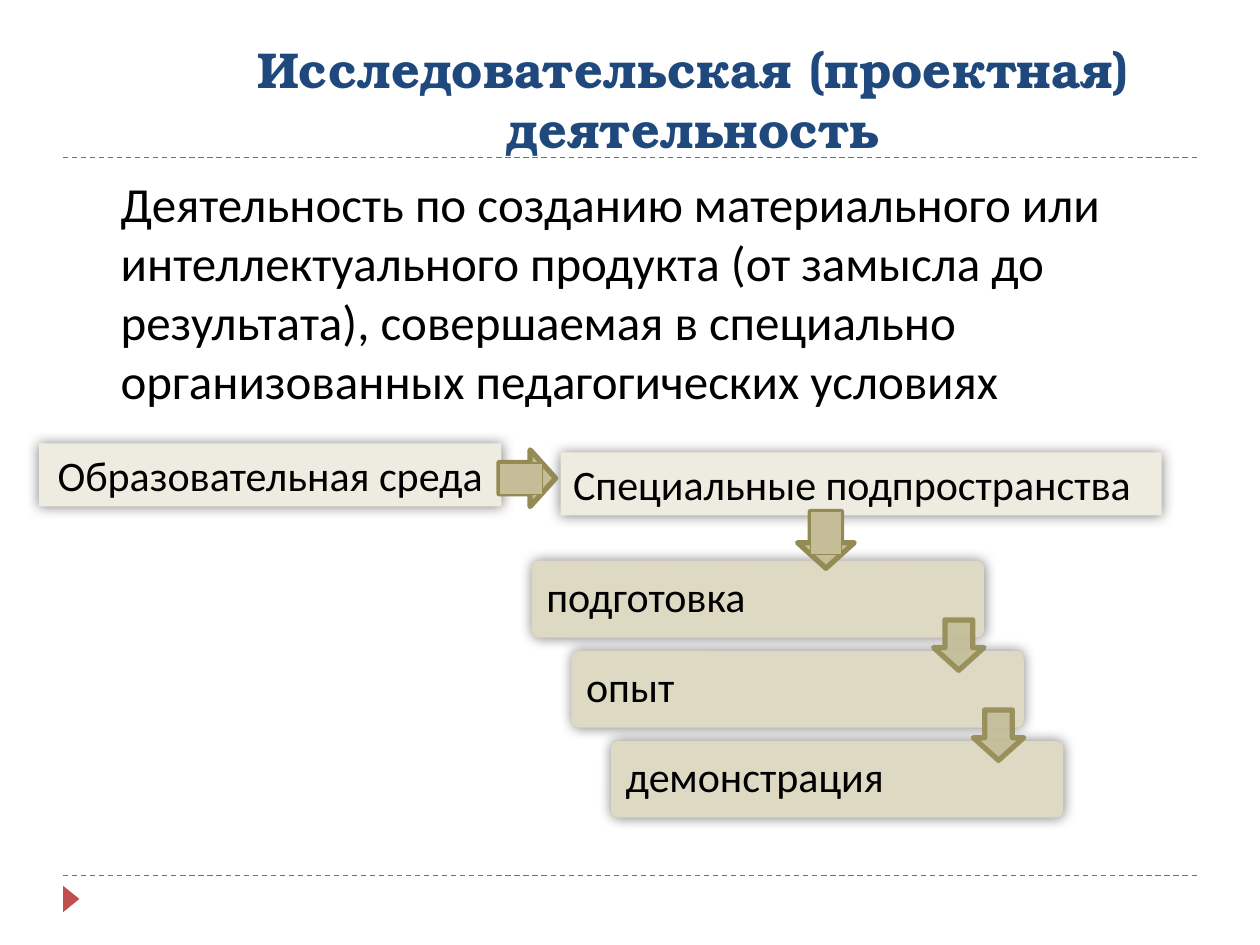
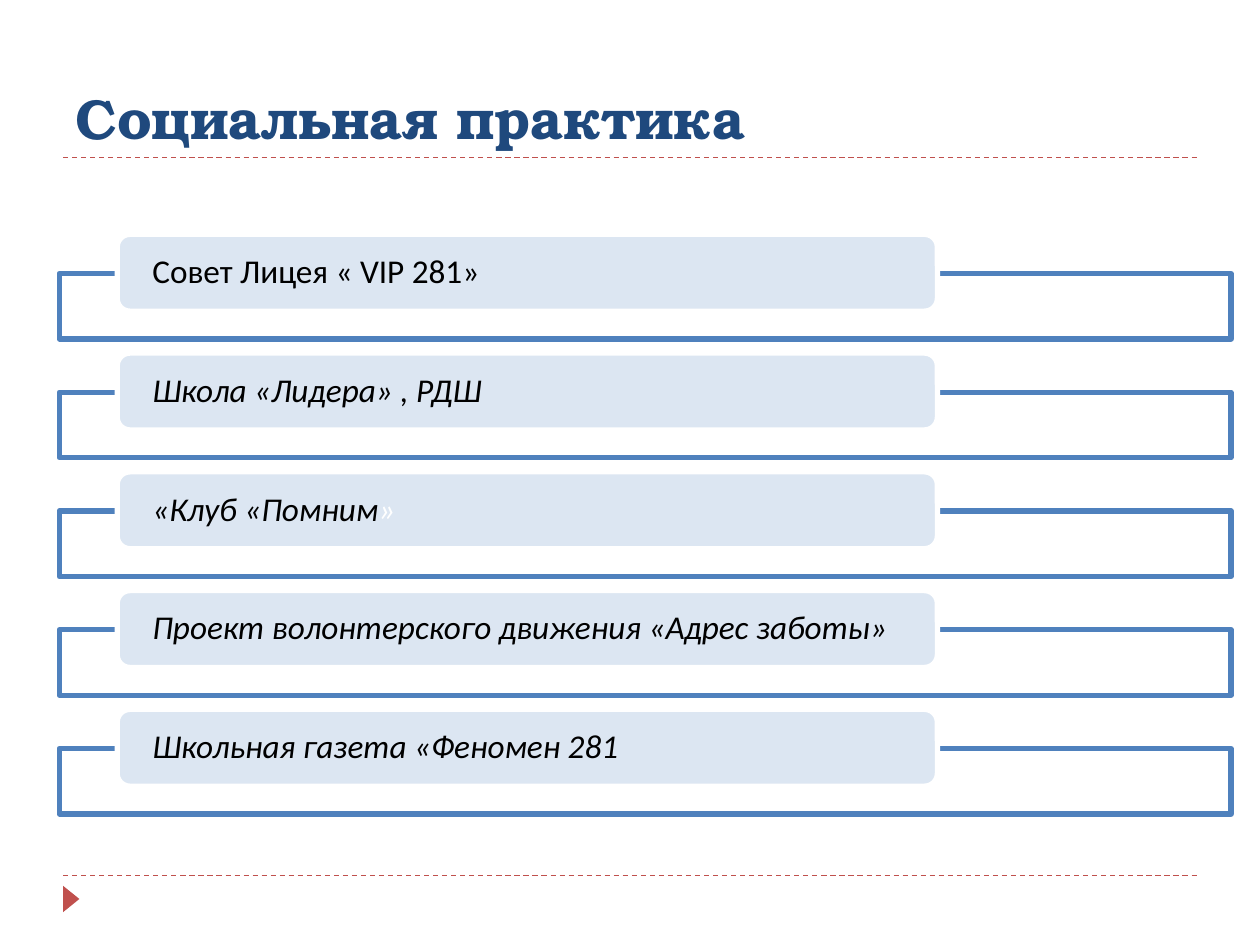
import pptx
import pptx.util
import pptx.dml.color
import pptx.enum.dml
import pptx.enum.shapes
import pptx.enum.text
import pptx.oxml
import pptx.oxml.ns

Inches = pptx.util.Inches
Pt = pptx.util.Pt
Shape = pptx.enum.shapes.MSO_SHAPE
Anchor = pptx.enum.text.MSO_ANCHOR
Align = pptx.enum.text.PP_ALIGN

WIDTH, HEIGHT = 10, 7.5
MARGIN = WIDTH * 0.05
RULE_TOPS = (1.25, 6.95)

NAVY, BLACK, WHITE, RED = "1F497D", "000000", "FFFFFF", "C0504D"
CREAM, SAND, TAN, OLIVE = "EEECE1", "DDD9C3", "C4BD97", "948A54"
BLUE, PALE_BLUE = "4F81BD", "DCE6F2"
BODY_FONT, TITLE_FONT = "Calibri", "TeX Gyre Bonum"

RESEARCH = {
    "title": "Исследовательская (проектная) деятельность",
    "definition": "Деятельность по созданию материального или интеллектуального "
                  "продукта (от замысла до результата), совершаемая в специально "
                  "организованных педагогических условиях",
    "environment": "Образовательная среда",
    "subspaces": "Специальные подпространства",
    "steps": ["подготовка", "опыт", "демонстрация"],
}
PRACTICE = {
    "title": "Социальная практика",
    "items": [
        [("Совет Лицея « VIP 281»", BLACK, False)],
        [("Школа «Лидера» , РДШ", BLACK, True)],
        [("«Клуб «Помним", BLACK, True), ("»", WHITE, True)],
        [("Проект волонтерского движения «Адрес заботы»", BLACK, True)],
        [("Школьная газета «Феномен 281", BLACK, True)],
    ],
}


def colour(value):
    return pptx.dml.color.RGBColor.from_string(value)


def apply(target, **values):
    for name, value in values.items():
        setattr(target, name, value)


def paint(fill, value, opacity=100):
    fill.solid()
    fill.fore_color.rgb = colour(value)
    if opacity < 100:
        solid = fill._xPr.find(pptx.oxml.ns.qn("a:solidFill"))
        solid[0].append(pptx.oxml.parse_xml(
            f'<a:alpha {pptx.oxml.ns.nsdecls("a")} val="{opacity * 1000}"/>'))


def write(frame, runs, size, font=BODY_FONT, bold=False, align=Align.LEFT,
          anchor=Anchor.TOP, inset=(0.1, 0.05), spacing=1.0):
    across, down = map(Inches, inset)
    apply(frame, word_wrap=True, auto_size=pptx.enum.text.MSO_AUTO_SIZE.NONE,
          vertical_anchor=anchor, margin_left=across, margin_right=across,
          margin_top=down, margin_bottom=down)
    paragraph = frame.paragraphs[0]
    apply(paragraph, alignment=align, line_spacing=spacing)
    for text, ink, italic in runs:
        run = paragraph.add_run()
        run.text = text
        apply(run.font, name=font, size=Pt(size), bold=bold, italic=italic)
        run.font.color.rgb = colour(ink)


def plain(text, ink=BLACK):
    return [(text, ink, False)]


def block(slide, kind, box, fill, line=None, weight=3, opacity=100,
          line_opacity=100, adjust=(), rotation=0, shadow=False):
    shape = slide.shapes.add_shape(kind, *map(Inches, box))
    shape.rotation = rotation
    for index, value in enumerate(adjust):
        shape.adjustments[index] = value
    paint(shape.fill, fill, opacity)
    if line:
        shape.line.width = Pt(weight)
        paint(shape.line.fill, line, line_opacity)
    else:
        shape.line.fill.background()
    shape.shadow.inherit = False
    if shadow:
        effects = shape._element.spPr.find(pptx.oxml.ns.qn("a:effectLst"))
        effects.append(pptx.oxml.parse_xml(
            f'<a:outerShdw {pptx.oxml.ns.nsdecls("a")} blurRad="{Pt(7.5)}" dist="0" '
            f'algn="ctr" rotWithShape="0"><a:srgbClr val="{BLACK}">'
            '<a:alpha val="50000"/></a:srgbClr></a:outerShdw>'))
    return shape


def down_arrow(slide, left, top, size, rotation=0, opacity=100):
    block(slide, Shape.DOWN_ARROW, (left, top, size, size), TAN, OLIVE,
          opacity=opacity, line_opacity=opacity, adjust=(0.55, 0.45), rotation=rotation)


def shafted_arrow(slide, left, top, shaft_left, shaft_top, rotation=0):
    down_arrow(slide, left, top, 0.45, rotation)
    block(slide, Shape.RECTANGLE, (shaft_left, shaft_top, 0.25, 0.34), TAN, OLIVE,
          weight=0.75, rotation=rotation)


def start_slide(deck, title, box, size, align):
    slide = deck.slides.add_slide(deck.slide_layouts[5])
    for top in RULE_TOPS:
        rule = slide.shapes.add_connector(
            pptx.enum.shapes.MSO_CONNECTOR.STRAIGHT,
            *map(Inches, (MARGIN, top, WIDTH - MARGIN, top)))
        apply(rule.line, width=Pt(0.75), dash_style=pptx.enum.dml.MSO_LINE.DASH)
        rule.line.color.rgb = colour(RED)
        rule._element.spPr.append(pptx.oxml.parse_xml(
            f'<a:effectLst {pptx.oxml.ns.nsdecls("a")}/>'))
    block(slide, Shape.ISOSCELES_TRIANGLE, (0.46, 7.07, 0.21, 0.13), RED, rotation=90)
    heading = slide.shapes.title
    apply(heading, **dict(zip(("left", "top", "width", "height"), map(Inches, box))))
    write(heading.text_frame, plain(title, NAVY), size, TITLE_FONT, True, align,
          Anchor.BOTTOM)
    return slide


def research_slide(deck):
    slide = start_slide(deck, RESEARCH["title"], (1, 0.31, 9, 1), 28.8, Align.CENTER)
    definition = slide.shapes.add_textbox(*map(Inches, (0.86, 1.33, 8.36, 1.99)))
    write(definition.text_frame, plain(RESEARCH["definition"]), 28)

    for part, box, align in (("environment", (0.31, 3.52, 3.67, 0.5), Align.CENTER),
                             ("subspaces", (4.45, 3.59, 4.77, 0.5), Align.LEFT)):
        label = block(slide, Shape.RECTANGLE, box, CREAM, shadow=True)
        write(label.text_frame, plain(RESEARCH[part]), 24, align=align)

    left, top, width, height = 4.22, 4.45, 3.59, 0.61
    shift, drop, arrow = 0.315, 0.715, 0.4
    corners = [(left + i * shift, top + i * drop) for i in range(len(RESEARCH["steps"]))]
    for (x, y), text in zip(corners, RESEARCH["steps"]):
        step = block(slide, Shape.ROUNDED_RECTANGLE, (x, y, width, height), SAND,
                     adjust=(0.1,), shadow=True)
        write(step.text_frame, plain(text), 24, anchor=Anchor.MIDDLE,
              inset=(0.1, 0.1), spacing=0.9)
    for x, y in corners[:-1]:
        down_arrow(slide, x + width - arrow, y + 0.47, arrow, opacity=90)

    shafted_arrow(slide, 6.33, 4.06, 6.43, 4.06)
    shafted_arrow(slide, 3.96, 3.57, 4.01, 3.63, rotation=270)


def practice_slide(deck):
    slide = start_slide(deck, PRACTICE["title"], (MARGIN, 0.25, 9, 1), 32, Align.LEFT)
    first, last = 1.86, 5.63
    pitch = (last - first) / (len(PRACTICE["items"]) - 1)
    for row, runs in enumerate(PRACTICE["items"]):
        top = first + row * pitch
        block(slide, Shape.RECTANGLE, (0.47, top + 0.31, 9.3, 0.52), WHITE, BLUE,
              opacity=90)
        item = block(slide, Shape.ROUNDED_RECTANGLE, (0.93, top, 6.51, 0.61),
                     PALE_BLUE, WHITE)
        write(item.text_frame, runs, 19, anchor=Anchor.MIDDLE, inset=(0.25, 0),
              spacing=0.9)


def main():
    deck = pptx.Presentation()
    apply(deck, slide_width=Inches(WIDTH), slide_height=Inches(HEIGHT))
    research_slide(deck)
    practice_slide(deck)
    deck.save("out.pptx")


if __name__ == "__main__":
    main()
